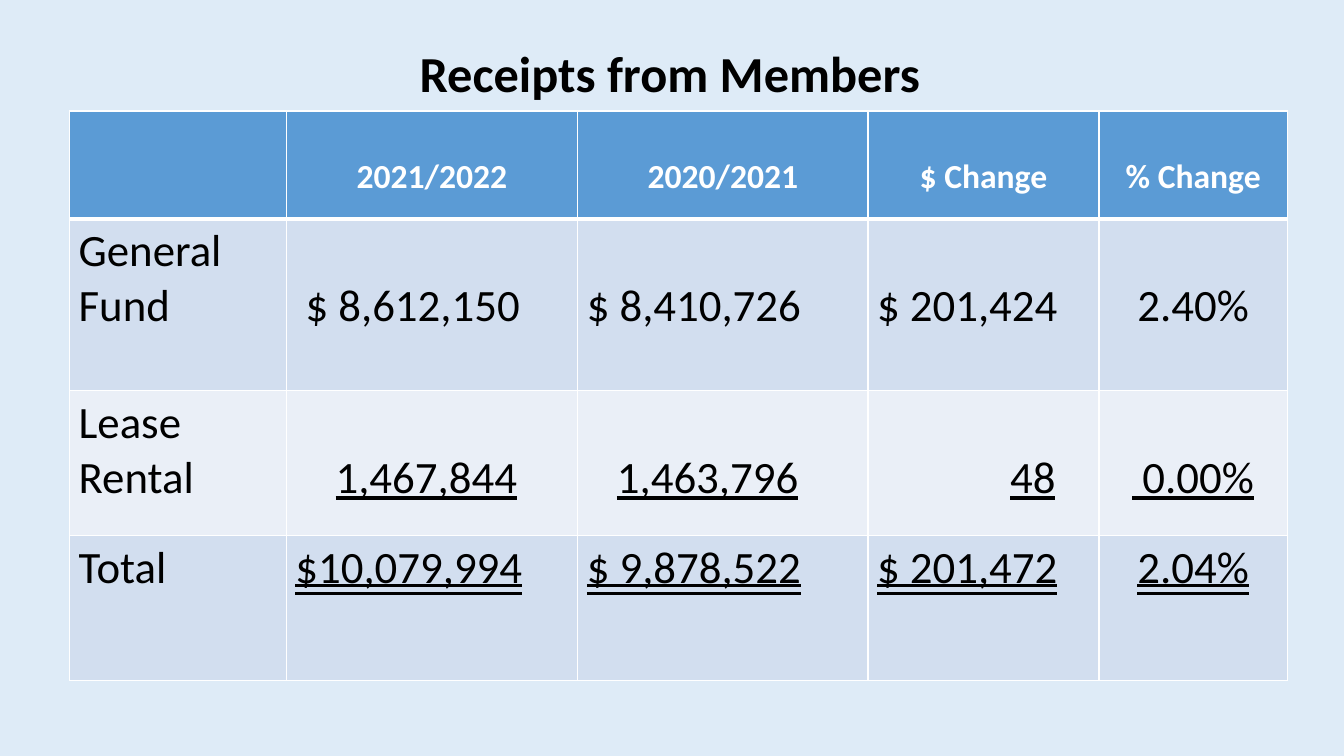
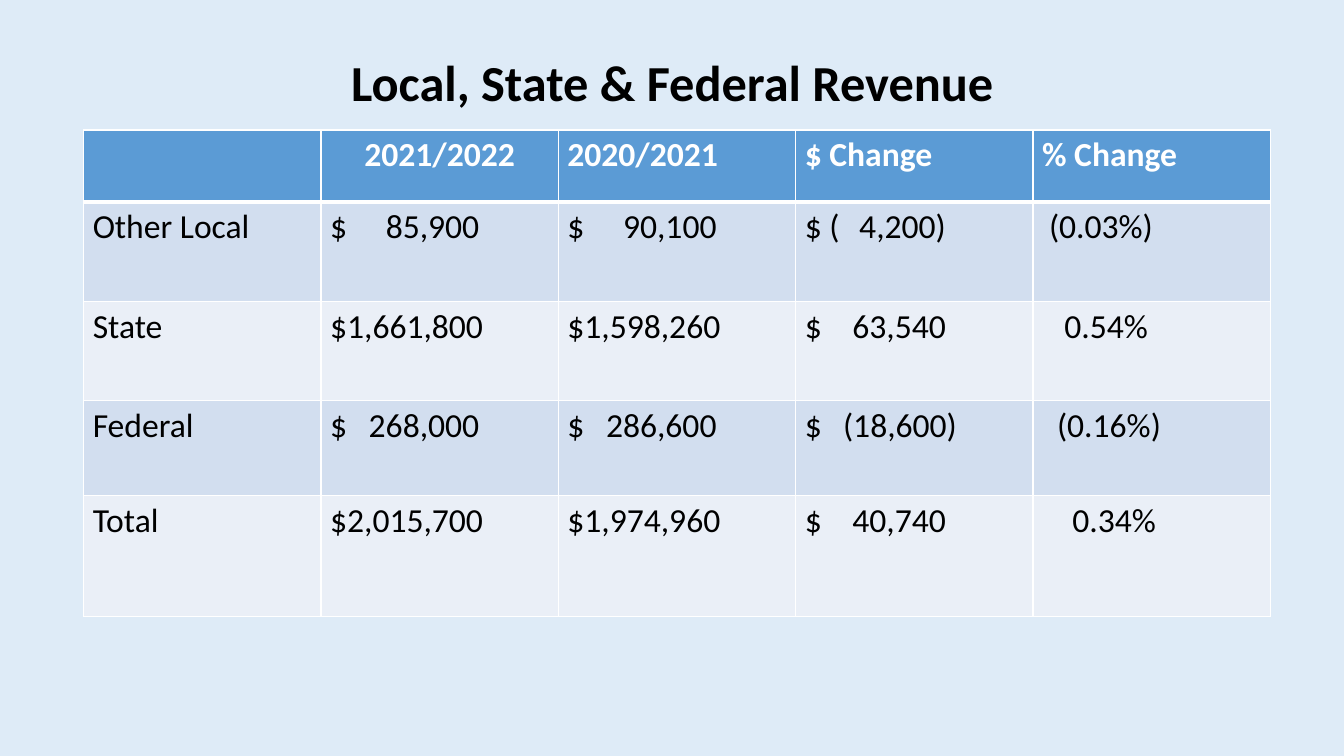
from lxml.etree import SubElement
from pptx import Presentation
from pptx.dml.color import RGBColor
from pptx.enum.text import MSO_ANCHOR, MSO_AUTO_SIZE, MSO_UNDERLINE, PP_ALIGN
from pptx.oxml import parse_xml
from pptx.oxml.ns import nsdecls, qn
from pptx.util import Inches, Pt

WIDE, HIGH = Inches(13.33), Inches(7.5)
FONT = "Calibri"
BACK, HEAD, INK, WHITE = "DEEBF7", "5B9BD5", "000000", "FFFFFF"
BANDS = "D2DEEF", "EAEFF7"
LINE = 1.22
MID = PP_ALIGN.CENTER
ONE, TWO = MSO_UNDERLINE.SINGLE_LINE, MSO_UNDERLINE.DOUBLE_LINE
HEADS = ["", "2021/2022", "2020/2021", "$ Change", "% Change"]


def color(code):
    """Turn a hex string into a colour."""
    return RGBColor.from_string(code)


def place(left, top, wide, high):
    """Turn percentages of the slide into lengths."""
    return (int(WIDE * left / 100), int(HIGH * top / 100),
            int(WIDE * wide / 100), int(HIGH * high / 100))


def style(para, size, ink, bold=False, under=None):
    """Set the font of a whole paragraph."""
    font = para.font
    font.name, font.size, font.bold = FONT, Pt(size), bold
    font.color.rgb = color(ink)
    if under:
        font.underline = under


def add_title(slide, text, box):
    """Fill and place the title."""
    title = slide.shapes.title
    title.left, title.top, title.width, title.height = place(*box)
    frame = title.text_frame
    frame.text = text
    frame.auto_size = MSO_AUTO_SIZE.NONE
    frame.vertical_anchor = MSO_ANCHOR.MIDDLE
    para = frame.paragraphs[0]
    para.alignment, para.line_spacing = MID, 0.9
    style(para, 36, INK, True)


def set_stop(para, inches):
    """Add a right-aligned tab stop."""
    stops = parse_xml(f"<a:tabLst {nsdecls('a')}/>")
    SubElement(stops, qn("a:tab"), pos=str(Inches(inches)), algn="r")
    para._p.get_or_add_pPr().insert(0, stops)


def edge(cell, base):
    """Draw white cell borders, with the bottom one of the given width."""
    props = cell._tc.get_or_add_tcPr()
    for spot, (side, width) in enumerate(zip("LRTB", (1, 1, 1, base))):
        props.insert(spot, parse_xml(
            f'<a:ln{side} {nsdecls("a")} w="{Pt(width)}"><a:solidFill>'
            f'<a:srgbClr val="{WHITE}"/></a:solidFill></a:ln{side}>'))


def fill_cell(cell, item, stop, row, size, drop, align, under):
    """Write and format one cell."""
    text, stop = item if isinstance(item, tuple) else (item, stop)
    head = row == 0
    cell.fill.solid()
    cell.fill.fore_color.rgb = color(HEAD if head else BANDS[(row - 1) % 2])
    edge(cell, 3 if head else 1)
    cell.margin_left = cell.margin_right = Inches(0.09)
    cell.margin_bottom = Inches(0.05)
    cell.margin_top = Inches(0.05) + (Pt(size * LINE) if drop else 0)
    cell.text = text
    para = cell.text_frame.paragraphs[0]
    para.alignment = align
    style(para, size, WHITE if head else INK, head, under)
    if "\t" in text:
        set_stop(para, stop)


def add_grid(slide, box, cols, highs, rows, stops, size,
             drops=(), mids=(), unders=()):
    """Add a banded table; drops, mids and unders pick cells to adjust."""
    left, top, wide, high = place(*box)
    table = slide.shapes.add_table(len(rows), len(cols), left, top, wide, high).table
    for col, part in zip(table.columns, cols):
        col.width = int(wide * part / sum(cols))
    for line, part in zip(table.rows, highs):
        line.height = int(high * part / sum(highs))
    for row, items in enumerate(rows):
        for col, item in enumerate(items):
            fill_cell(table.cell(row, col), item, stops[col], row,
                      size if row else 24, col and row in drops,
                      MID if (row, col) in mids else PP_ALIGN.LEFT,
                      dict(unders).get(row) if col else None)


def add_page(deck, name, spot):
    """Add a titled slide."""
    slide = deck.slides.add_slide(deck.slide_layouts[5])
    add_title(slide, name, spot)
    return slide


def main():
    """Build the deck."""
    deck = Presentation()
    deck.slide_width, deck.slide_height = WIDE, HIGH
    back = deck.slide_master.background.fill
    back.solid()
    back.fore_color.rgb = color(BACK)

    page = add_page(deck, "Receipts from Members", (9, 4.13, 81.7, 11.87))
    add_grid(page, (5.18, 14.67, 90.62, 75.4),
             (2.15, 2.89, 2.88, 2.29, 1.87), (1.07, 1.71, 1.44, 1.44), [
        HEADS,
        ["General Fund", " $ 8,612,150", "$ 8,410,726", "$ 201,424", "2.40%"],
        ["Lease Rental", "\t1,467,844", "\t1,463,796", "\t48", " 0.00%"],
        ["Total", "$10,079,994", "$ 9,878,522", "$ 201,472", "2.04%"],
    ], (0, 2.2, 2.1, 1.77, 0), 32, drops=(0, 1, 2),
        mids=[(0, col) for col in range(5)] + [(row, 4) for row in range(1, 4)],
        unders=((2, ONE), (3, TWO)))

    page = add_page(deck, "Local, State & Federal Revenue", (6.9, 5.33, 86.27, 11.87))
    add_grid(page, (6.23, 17.2, 88.3, 64.4),
             (1,) * 5, (0.71, 0.99, 0.98, 0.94, 1.2), [
        HEADS,
        ["Other Local", "$\t85,900", "$\t90,100", "$ (\t4,200)", "\t(0.03%)"],
        ["State", "$1,661,800", "$1,598,260", "$\t63,540", ("\t0.54%", 1.05)],
        ["Federal", "$\t268,000", "$\t286,600", ("$\t(18,600)", 1.51),
         ("\t(0.16%)", 1.18)],
        ["Total", "$2,015,700", "$1,974,960", "$\t40,740", ("\t0.34%", 1.13)],
    ], (0, 1.48, 1.48, 1.4, 1.1), 24, mids=[(0, 1)])
    deck.save("out.pptx")


if __name__ == "__main__":
    main()
